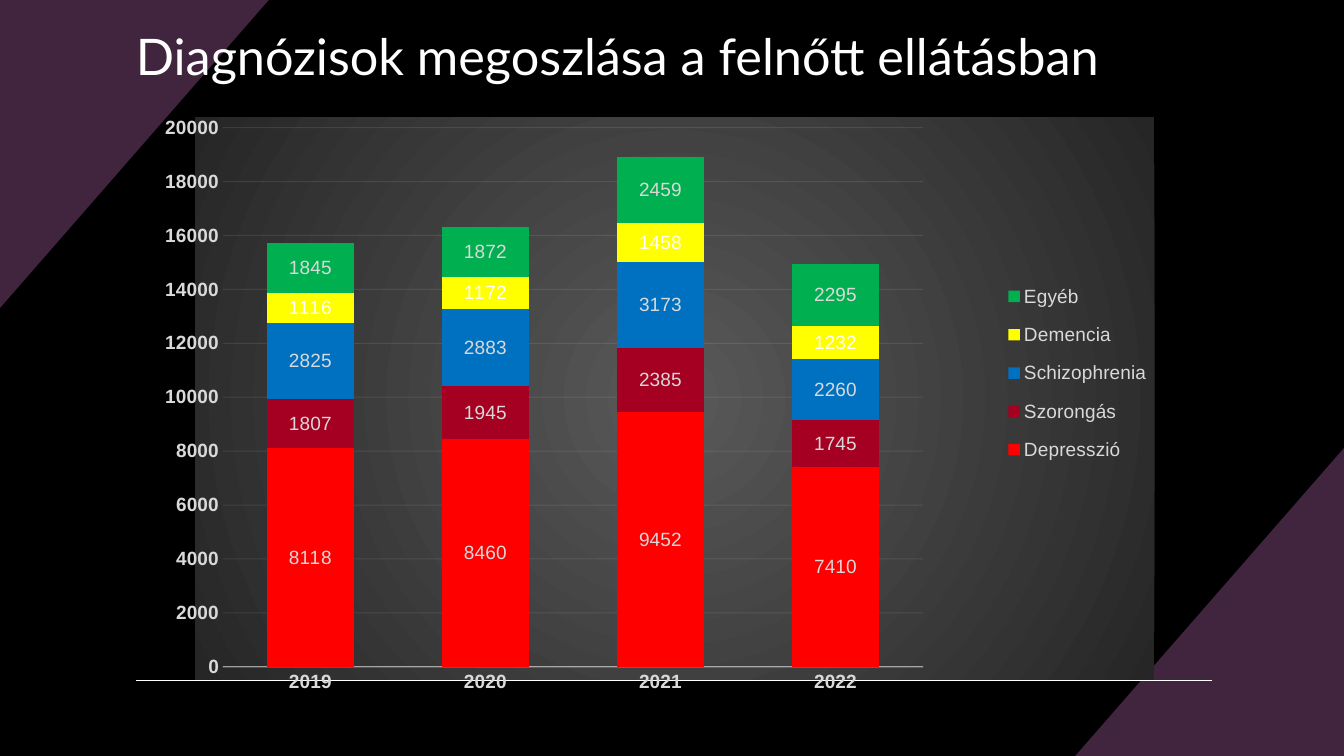
from lxml import etree
from pptx import Presentation
from pptx.chart import data as cd
from pptx.dml import color as dc
from pptx.enum import chart as ch, shapes as sh, text as tx
from pptx.oxml import parse_xml
from pptx.oxml.ns import nsdecls, qn
from pptx.util import Pt

WIDE, HIGH = 960, 540
WHITE, PALE, GREY, PLUM = "FFFFFF", "F2F2F2", "D9D9D9", "41243E"
YEARS = ["2019", "2020", "2021", "2022"]
# name, values, fill, label colour
CASES = [
    ("Depresszió", (8118, 8460, 9452, 7410), "FF0000", GREY),
    ("Szorongás", (1807, 1945, 2385, 1745), "A50021", GREY),
    ("Schizophrenia", (2825, 2883, 3173, 2260), "0070C0", GREY),
    ("Demencia", (1116, 1172, 1458, 1232), "FFFF00", WHITE),
    ("Egyéb", (1845, 1872, 2459, 2295), "00B050", GREY),
]


def paint(fill, tone):
    fill.solid()
    fill.fore_color.rgb = dc.RGBColor.from_string(tone)


def put(obj, **vals):
    for key, val in vals.items():
        setattr(obj, key, val)


def style(font, size, tone, face="Arial", bold=False):
    put(font, size=Pt(size), name=face, bold=bold)
    paint(font.fill, tone)


def stroke(line, tone, width, alpha=None):
    line.width = Pt(width)
    paint(line.fill, tone)
    if alpha:
        clr = line.fill._xPr.find(".//" + qn("a:srgbClr"))
        etree.SubElement(clr, qn("a:alpha"), val=str(alpha * 1000))


def corner(slide, pts):
    pen = slide.shapes.build_freeform(Pt(pts[0][0]), Pt(pts[0][1]))
    pen.add_line_segments([(Pt(x), Pt(y)) for x, y in pts[1:]], close=True)
    shape = pen.convert_to_shape()
    shape.shadow.inherit = False
    paint(shape.fill, PLUM)
    shape.line.fill.background()


def rule(slide, x1, x2, y):
    line = slide.shapes.add_connector(
        sh.MSO_CONNECTOR.STRAIGHT, Pt(x1), Pt(y), Pt(x2), Pt(y))
    stroke(line.line, WHITE, 1)
    etree.SubElement(line._element.spPr, qn("a:effectLst"))


def title(slide, words, *box):
    frame = slide.shapes.add_textbox(*map(Pt, box)).text_frame
    put(frame, word_wrap=True, vertical_anchor=tx.MSO_ANCHOR.MIDDLE)
    run = frame.paragraphs[0].add_run()
    run.text = words
    style(run.font, 36, WHITE, "Lato")


def layout(x, y, w, h, inner=False):
    target = '<c:layoutTarget val="inner"/>' if inner else ""
    sizes = "".join(f'<c:{k} val="{v}"/>' for k, v in zip("xywh", (x, y, w, h)))
    return parse_xml(
        f'<c:layout {nsdecls("c")}><c:manualLayout>{target}'
        '<c:xMode val="edge"/><c:yMode val="edge"/>'
        f'{sizes}</c:manualLayout></c:layout>')


def glow(chart, mid, rim):
    stops = "".join(
        f'<a:gs pos="{pos}"><a:srgbClr val="{tone}"/></a:gs>'
        for pos, tone in ((0, mid), (100000, rim)))
    back = parse_xml(
        f'<c:spPr {nsdecls("c", "a")}><a:gradFill><a:gsLst>{stops}</a:gsLst>'
        '<a:path path="circle"><a:fillToRect l="50000" t="50000" r="50000"'
        ' b="50000"/></a:path></a:gradFill><a:ln><a:noFill/></a:ln></c:spPr>')
    chart._chartSpace.chart.addnext(back)


def axes(chart):
    for axis in (chart.category_axis, chart.value_axis):
        put(axis, major_tick_mark=ch.XL_TICK_MARK.NONE,
            minor_tick_mark=ch.XL_TICK_MARK.NONE)
        style(axis.tick_labels.font, 14, GREY, bold=True)
    stroke(chart.category_axis.format.line, PALE, 1, 54)
    put(chart.value_axis, minimum_scale=0, maximum_scale=20000,
        major_unit=2000, has_major_gridlines=True)
    chart.value_axis.format.line.fill.background()
    stroke(chart.value_axis.major_gridlines.format.line, PALE, 0.75, 10)


def stack(slide, *box):
    data = cd.CategoryChartData()
    data.categories = YEARS
    for name, vals, *_ in CASES:
        data.add_series(name, vals)
    chart = slide.shapes.add_chart(
        ch.XL_CHART_TYPE.COLUMN_STACKED, *map(Pt, box), data).chart
    put(chart, has_title=False, has_legend=True)
    style(chart.font, 10, "000000")
    glow(chart, "595959", "262626")
    axes(chart)

    # Columns and their labels
    plot = chart.plots[0]
    put(plot, gap_width=100, overlap=100, vary_by_categories=False)
    for ser, (_, _, tone, ink) in zip(plot.series, CASES):
        paint(ser.format.fill, tone)
        tags = ser.data_labels
        put(tags, show_value=True, position=ch.XL_LABEL_POSITION.CENTER)
        style(tags.font, 14, ink)

    # Legend and plot area
    key = chart.legend
    put(key, position=ch.XL_LEGEND_POSITION.RIGHT, include_in_layout=False)
    style(key.font, 14, GREY)
    key._element.find(qn("c:legendPos")).addnext(layout(0.84, 0.27, 0.16, 0.37))
    area = chart._chartSpace.chart.plotArea
    for old in area.findall(qn("c:layout")):
        area.remove(old)
    area.insert(0, layout(0.029, 0.019, 0.73, 0.958, True))


def main():
    prs = Presentation()
    put(prs, slide_width=Pt(WIDE), slide_height=Pt(HIGH))
    slide = prs.slides.add_slide(prs.slide_layouts[6])
    paint(slide.background.fill, "000000")

    # Backdrop
    w, h = 192, 220
    corner(slide, [(WIDE, HIGH - h), (WIDE, HIGH), (WIDE - w, HIGH)])
    corner(slide, [(0, h), (0, 0), (w, 0)])
    rule(slide, 97, 865.5, 486)

    # Content
    title(slide, "Diagnózisok megoszlása a felnőtt ellátásban", 90, 6, 784, 67)
    stack(slide, 118, 83.5, 706.5, 411)
    prs.save("out.pptx")


if __name__ == "__main__":
    main()
